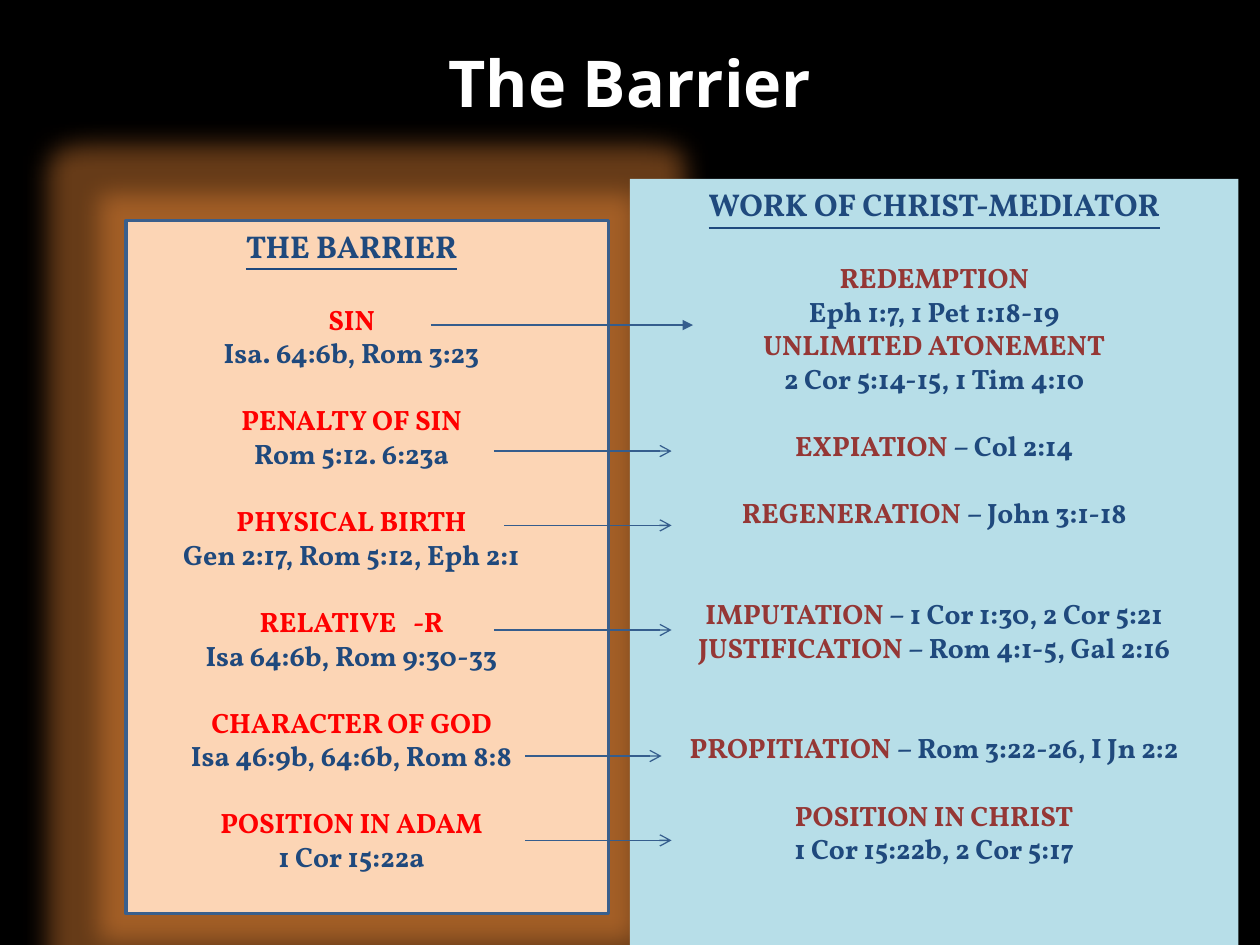
import pptx
import pptx.util
import pptx.dml.color
import pptx.enum.shapes
import pptx.enum.text
import pptx.oxml
import pptx.oxml.ns
from lxml import etree

Inches, Pt = pptx.util.Inches, pptx.util.Pt
RECTANGLE = pptx.enum.shapes.MSO_SHAPE.RECTANGLE
ANCHOR = pptx.enum.text.MSO_ANCHOR
CENTER = pptx.enum.text.PP_ALIGN.CENTER

# Content
NAVY, RED, MAROON = "1F497D", "FF0000", "953735"
TITLE = "The Barrier"
BARRIER_HEADING = "THE BARRIER"
BARRIERS = [
    ("SIN", "Isa. 64:6b, Rom 3:23"),
    ("PENALTY OF SIN", "Rom 5:12. 6:23a"),
    ("PHYSICAL BIRTH", "Gen 2:17, Rom 5:12, Eph 2:1"),
    ("RELATIVE   -R", "Isa 64:6b, Rom 9:30-33"),
    ("CHARACTER OF GOD", "Isa 46:9b, 64:6b, Rom 8:8"),
    ("POSITION IN ADAM", "1 Cor 15:22a"),
]
WORK_HEADING = "WORK OF CHRIST-MEDIATOR"
# Each line: empty lines of space above, doctrine, reference
WORKS = [
    (1, "REDEMPTION", ""),
    (0, "", "Eph 1:7, 1 Pet 1:18-19"),
    (0, "UNLIMITED ATONEMENT", ""),
    (0, "", "2 Cor 5:14-15, 1 Tim 4:10"),
    (1, "EXPIATION", " – Col 2:14"),
    (1, "REGENERATION ", "– John 3:1-18"),
    (2, "IMPUTATION", " – 1 Cor 1:30, 2 Cor 5:21"),
    (0, "JUSTIFICATION", " – Rom 4:1-5, Gal 2:16"),
    (2, "PROPITIATION", " – Rom 3:22-26, I Jn 2:2"),
    (1, "POSITION IN CHRIST", ""),
    (0, "", "1 Cor 15:22b, 2 Cor 5:17"),
]
# Start x, end x, y, arrowhead
ARROWS = [
    (3.42, 5.5, 2.58, "triangle"),
    (3.92, 5.33, 3.58, "arrow"),
    (4, 5.33, 4.17, "arrow"),
    (3.92, 5.33, 5, "arrow"),
    (4.17, 5.25, 6, "arrow"),
    (4.17, 5.33, 6.67, "arrow"),
]
HEADING_SIZE, BODY_SIZE, LINE_FACTOR = 18, 16, 1.2


def color(value):
    return pptx.dml.color.RGBColor.from_string(value)


def format_span(span, size, value, name="Vollkorn"):
    span.font.size, span.font.bold, span.font.name = Pt(size), True, name
    span.font.color.rgb = color(value)


def write_column(frame, heading, lines):
    """Write an underlined heading, then lines of (space above, coloured spans)."""
    frame.word_wrap = True
    frame.vertical_anchor = ANCHOR.TOP
    para = frame.paragraphs[0]
    para.text, para.alignment = heading, CENTER
    format_span(para.runs[0], HEADING_SIZE, NAVY)
    para.runs[0].font.underline = True
    for index, (space, spans) in enumerate(lines):
        para = frame.add_paragraph()
        para.alignment = CENTER
        size = BODY_SIZE if index else HEADING_SIZE
        para.space_before = Pt(round(space * size * LINE_FACTOR, 1))
        for text, value in spans:
            if text:
                span = para.add_run()
                span.text = text
                format_span(span, BODY_SIZE, value)


def add_panel(shapes, left, top, width, height, fill):
    panel = shapes.add_shape(RECTANGLE, Inches(left), Inches(top), Inches(width), Inches(height))
    panel.fill.solid()
    panel.fill.fore_color.rgb = color(fill)
    panel.line.fill.background()
    panel.shadow.inherit = False
    return panel


def add_glow(shape, value, radius, alpha):
    effects = shape._element.spPr.find(pptx.oxml.ns.qn("a:effectLst"))
    effects.append(pptx.oxml.parse_xml(
        f'<a:glow {pptx.oxml.ns.nsdecls("a")} rad="{Inches(radius)}"><a:srgbClr val="{value}">'
        f'<a:alpha val="{alpha * 1000}"/></a:srgbClr></a:glow>'))


def add_arrow(shapes, start, end, y, head):
    arrow = shapes.add_connector(pptx.enum.shapes.MSO_CONNECTOR.STRAIGHT,
                                 Inches(start), Inches(y), Inches(end), Inches(y))
    arrow.line.color.rgb = color("355D8D")
    arrow.line.width = Pt(0.75)
    qn = pptx.oxml.ns.qn
    etree.SubElement(arrow.line._get_or_add_ln(), qn("a:tailEnd"), type=head)
    etree.SubElement(arrow._element.spPr, qn("a:effectLst"))


def main():
    deck = pptx.Presentation()
    deck.slide_width, deck.slide_height = Inches(10), Inches(7.5)
    page = deck.slides.add_slide(deck.slide_layouts[5])
    page.background.fill.solid()
    page.background.fill.fore_color.rgb = color("000000")
    shapes = page.shapes

    # Title
    title = shapes.title
    title.left, title.top, title.width, title.height = map(Inches, (0.5, 0.3, 9, 0.7))
    title.text_frame.text = TITLE
    title.text_frame.vertical_anchor = ANCHOR.MIDDLE
    para = title.text_frame.paragraphs[0]
    para.alignment = CENTER
    format_span(para.runs[0], 36.9, "FFFFFF", "Noto Sans")

    # Barrier panel and its text
    barrier = add_panel(shapes, 1, 1.75, 3.83, 5.5, "FCD5B5")
    barrier.line.color.rgb = color("3A5F8C")
    barrier.line.width = Pt(2)
    add_glow(barrier, "FF943C", 0.4, 40)
    box = shapes.add_textbox(Inches(0.58), Inches(1.75), Inches(4.42), Inches(6.16))
    lines = []
    for name, reference in BARRIERS:
        lines += [(1, [(name, RED)]), (0, [(reference, NAVY)])]
    write_column(box.text_frame, BARRIER_HEADING, lines)

    # Work of the mediator
    work = add_panel(shapes, 5, 1.42, 4.83, 7.67, "B7DEE8")
    write_column(work.text_frame, WORK_HEADING,
                 [(space, [(name, MAROON), (reference, NAVY)]) for space, name, reference in WORKS])

    # Arrows from each barrier to its answer
    for arrow in ARROWS:
        add_arrow(shapes, *arrow)

    deck.save("out.pptx")


if __name__ == "__main__":
    main()
